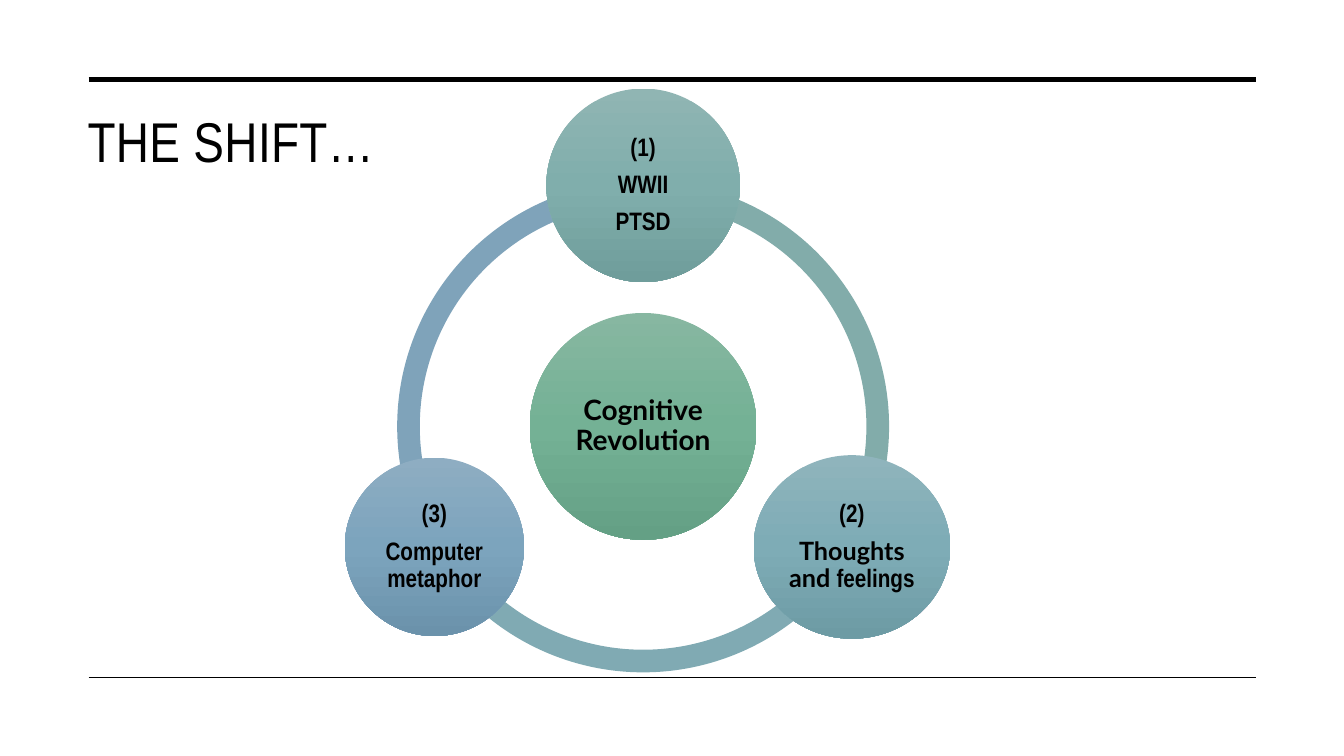
from copy import deepcopy
from dataclasses import dataclass
from math import cos, radians, sin

from lxml.etree import SubElement
from pptx import Presentation
from pptx.dml.color import RGBColor
from pptx.enum.shapes import MSO_CONNECTOR, MSO_SHAPE
from pptx.enum.text import MSO_ANCHOR, PP_ALIGN
from pptx.oxml.ns import qn
from pptx.util import Inches, Pt


@dataclass(frozen=True)
class Theme:
    ink: str = "000000"
    head: str = "Arial Narrow"
    body: str = "Lato"
    title: int = 40
    hub: int = 20
    node: int = 18
    thick: float = 3.5
    thin: float = 1
    green: tuple = ("87B7A1", "74B195", "64A085")
    teal: tuple = ("90B5B3", "80AEAC", "6F9D9B")
    aqua: tuple = ("8FB4BC", "7EACB6", "6D9BA4")
    blue: tuple = ("8EADC2", "7CA4BD", "6B92AB")
    arcs: tuple = (("7FA3BA", 150, 270), ("80AAB3", 30, 150), ("82ACAA", 270, 30))


THEME = Theme()
COLS, ROWS = 133.33, 75
CELL = Inches(0.1)


def cells(*counts):
    return [round(n * CELL) for n in counts]


def style(run, font, size, bold=False):
    run.font.name = font
    run.font.size = Pt(size)
    run.font.bold = bold
    run.font.color.rgb = RGBColor.from_string(THEME.ink)


def add_rule(slide, box, weight):
    left, top, width = box
    x, y, end = cells(left, top, left + width)
    rule = slide.shapes.add_connector(MSO_CONNECTOR.STRAIGHT, x, y, end, y)
    rule.line.color.rgb = RGBColor.from_string(THEME.ink)
    rule.line.width = Pt(weight)
    SubElement(rule._element.spPr, qn("a:effectLst"))


def add_title(slide, box, text):
    frame = slide.shapes.add_textbox(*cells(*box)).text_frame
    frame.word_wrap = True
    frame.text = text
    run = frame.paragraphs[0].runs[0]
    style(run, THEME.head, THEME.title)
    run._r.get_or_add_rPr().set("spc", "30")


def add_arc(slide, box, color, start, end):
    arc = slide.shapes.add_shape(MSO_SHAPE.BLOCK_ARC, *cells(*box))
    arc.shadow.inherit = False
    for i, value in enumerate((start * 0.6, end * 0.6, 0.046)):
        arc.adjustments[i] = value
    arc.fill.solid()
    arc.fill.fore_color.rgb = RGBColor.from_string(color)
    arc.line.fill.background()


def shade(shape, colors):
    shape.fill.gradient()
    shape.fill.gradient_angle = 270
    stops = shape._element.spPr.find(qn("a:gradFill")).find(qn("a:gsLst"))
    stops.insert(1, deepcopy(stops[0]))
    for i, (stop, color) in enumerate(zip(shape.fill.gradient_stops, colors)):
        stop.position = i / 2
        stop.color.rgb = RGBColor.from_string(color)


def add_disc(slide, center, size, colors, lines, points):
    (x, y), (width, height) = center, size
    box = cells(x - width / 2, y - height / 2, width, height)
    disc = slide.shapes.add_shape(MSO_SHAPE.OVAL, *box)
    disc.shadow.inherit = False
    disc.line.fill.background()
    shade(disc, colors)
    frame = disc.text_frame
    frame.word_wrap = True
    frame.vertical_anchor = MSO_ANCHOR.MIDDLE
    frame.margin_left = frame.margin_right = Inches(0.03)
    frame.margin_top = frame.margin_bottom = Inches(0.03)
    for i, parts in enumerate(lines):
        para = frame.add_paragraph() if i else frame.paragraphs[0]
        para.alignment = PP_ALIGN.CENTER
        para.line_spacing = 0.9
        para.space_after = Pt(points * 0.4)
        for text, font in parts:
            run = para.add_run()
            run.text = text
            style(run, font, points, True)


def add_cycle(slide, box):
    left, top, side, _ = box
    x, y, reach = left + side / 2, top + side / 2, side * 0.49
    for color, start, end in THEME.arcs:
        add_arc(slide, box, color, start, end)
    head, body = THEME.head, THEME.body
    hub = [[("Cognitive Revolution", body)]]
    add_disc(slide, (x, y), (22.5, 22.5), THEME.green, hub, THEME.hub)
    nodes = (
        ((19.2, 19.2), THEME.teal, [[("(1)", head)], [("WWII", head)], [("PTSD", head)]]),
        ((19.5, 18.2), THEME.aqua,
         [[("(2)", head)], [("Thoughts and ", body), ("feelings", head)]]),
        ((17.8, 17.7), THEME.blue, [[("(3)", head)], [("Computer metaphor", head)]]),
    )
    for i, (size, colors, lines) in enumerate(nodes):
        turn = radians(i * 360 / len(nodes) - 90)
        center = x + reach * cos(turn), y + reach * sin(turn)
        add_disc(slide, center, size, colors, lines, THEME.node)


def main():
    deck = Presentation()
    deck.slide_width, deck.slide_height = cells(COLS, ROWS)
    slide = deck.slides.add_slide(deck.slide_layouts[6])
    add_rule(slide, (8.8, 7.9, 115.8), THEME.thick)
    add_rule(slide, (8.8, 67.2, 115.8), THEME.thin)
    add_title(slide, (7.7, 10.1, 116.9, 15), "THE SHIFT…")
    add_cycle(slide, (39.4, 17.9, 48.8, 48.8))
    deck.save("out.pptx")


if __name__ == "__main__":
    main()
